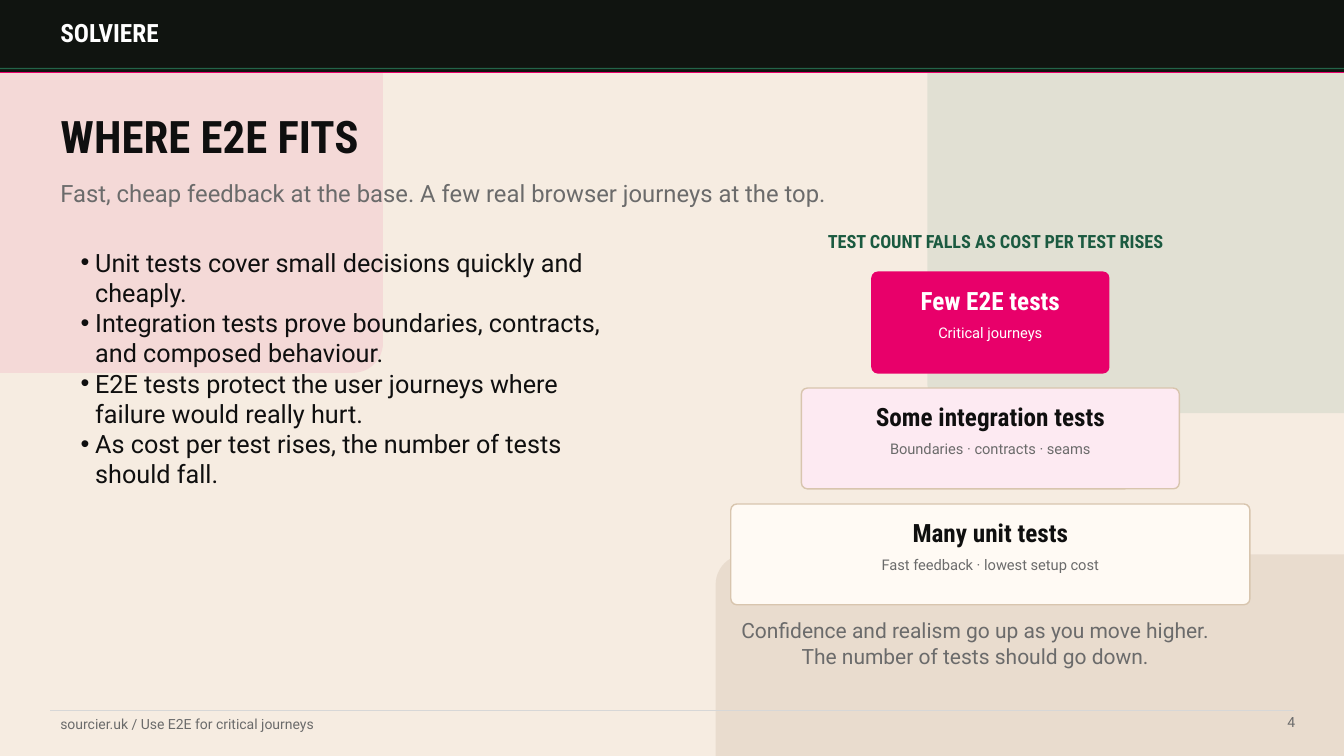
from lxml import etree
from pptx import Presentation
from pptx.dml.color import RGBColor
from pptx.enum.shapes import MSO_CONNECTOR, MSO_SHAPE
from pptx.enum.text import MSO_ANCHOR, MSO_AUTO_SIZE, PP_ALIGN
from pptx.oxml.ns import qn
from pptx.util import Pt

LEFT, CENTER, RIGHT = PP_ALIGN.LEFT, PP_ALIGN.CENTER, PP_ALIGN.RIGHT
TOP, MIDDLE = MSO_ANCHOR.TOP, MSO_ANCHOR.MIDDLE
RECT, ROUNDED = MSO_SHAPE.RECTANGLE, MSO_SHAPE.ROUNDED_RECTANGLE
STRAIGHT = MSO_CONNECTOR.STRAIGHT
NO_AUTOFIT = MSO_AUTO_SIZE.NONE

WIDTH, HEIGHT = 960, 540
SANS, CONDENSED = "Roboto", "Roboto Condensed"
COLORS = {
    "sand": "F6ECE1", "tan": "E5D8C9", "border": "D8C5AE", "cream": "FFFAF4",
    "pink": "E8006A", "blush": "FDEAF2", "green": "2A7D5B", "forest": "1B5A40",
    "night": "101410", "ink": "0F0F0F", "gray": "6B6B6B", "rule": "D7D7D7",
    "white": "FFFFFF",
}
BULLETS = [
    "Unit tests cover small decisions quickly and cheaply.",
    "Integration tests prove boundaries, contracts, and composed behaviour.",
    "E2E tests protect the user journeys where failure would really hurt.",
    "As cost per test rises, the number of tests should fall.",
]
# From the top of the pyramid down: heading, detail, fill, border, heading color, detail color
LEVELS = [
    ("Few E2E tests", "Critical journeys", "pink", "pink", "white", "white"),
    ("Some integration tests", "Boundaries · contracts · seams",
     "blush", "border", "ink", "gray"),
    ("Many unit tests", "Fast feedback · lowest setup cost",
     "cream", "border", "ink", "gray"),
]


def rgb(name):
    return RGBColor.from_string(COLORS[name])


def set_alpha(fill, percent):
    color = fill._xPr.find(qn("a:solidFill"))[0]
    etree.SubElement(color, qn("a:alpha"), val=str(percent * 1000))


def add_panel(page, x, y, w, h, fill, border=None, corner=None, alpha=None):
    kind = RECT if corner is None else ROUNDED
    panel = page.shapes.add_shape(kind, Pt(x), Pt(y), Pt(w), Pt(h))
    panel.shadow.inherit = False
    if corner is not None:
        panel.adjustments[0] = corner
    panel.fill.solid()
    panel.fill.fore_color.rgb = rgb(fill)
    if alpha:
        set_alpha(panel.fill, alpha)
    if border:
        panel.line.color.rgb = rgb(border)
        panel.line.width = Pt(1)
    else:
        panel.line.fill.background()


def add_rule(page, x, y, w, color, alpha=None):
    rule = page.shapes.add_connector(STRAIGHT, Pt(x), Pt(y), Pt(x + w), Pt(y))
    rule.line.color.rgb = rgb(color)
    rule.line.width = Pt(1)
    if alpha:
        set_alpha(rule.line.fill, alpha)
    etree.SubElement(rule.element.spPr, qn("a:effectLst"))


def add_bullet(para, indent):
    props = para._p.get_or_add_pPr()
    props.set("marL", str(Pt(indent)))
    props.set("indent", str(-Pt(indent)))
    etree.SubElement(props, qn("a:buChar"), char="•")


def write(page, text, x, y, w, h, size, color, font=SANS, bold=False,
          align=LEFT, anchor=MIDDLE, inset=True, box=None, bullet_indent=None):
    """Put text, a string or a list of paragraphs, in a new box or a placeholder."""
    if box is None:
        box = page.shapes.add_textbox(Pt(x), Pt(y), Pt(w), Pt(h))
    else:
        box.left, box.top, box.width, box.height = Pt(x), Pt(y), Pt(w), Pt(h)
        box.element.getparent().append(box.element)  # bring to front
    frame = box.text_frame
    frame.word_wrap = True
    frame.auto_size = NO_AUTOFIT
    frame.vertical_anchor = anchor
    if not inset:
        frame.margin_left = frame.margin_right = Pt(0)
        frame.margin_top = frame.margin_bottom = Pt(0)
    lines = [text] if isinstance(text, str) else text
    for index, line in enumerate(lines):
        para = frame.paragraphs[0] if index == 0 else frame.add_paragraph()
        para.alignment = align
        para.space_before = Pt(0)
        if bullet_indent:
            add_bullet(para, bullet_indent)
        span = para.add_run()
        span.text = line
        span.font.name = font
        span.font.size = Pt(size)
        span.font.bold = bold
        span.font.color.rgb = rgb(color)


def add_backdrop(page, w, h):
    page.background.fill.solid()
    page.background.fill.fore_color.rgb = rgb("sand")
    add_panel(page, -151.2, -86.4, 424.8, 352.8, "pink", corner=0.061, alpha=8)
    add_panel(page, w - 297.6, -108, 446.4, 403.2, "green", corner=0.054, alpha=10)
    add_panel(page, w - 448.8, h - 144, 583.2, 244.8, "tan", corner=0.088, alpha=76)


def add_header(page, x, y, w, h):
    add_panel(page, x, y, w, h, "night", border="night")
    add_rule(page, x, y + h, w, "pink")
    add_rule(page, x, y + h - 2.88, w, "green", alpha=76)
    write(page, "SOLVIERE", x + 36, y + 12.24, 201.6, 21.6, 18, "white",
          font=CONDENSED, bold=True)


def add_heading(page, x, y, w):
    write(page, "WHERE E2E FITS", x, y, 640.8, 50.4, 32, "ink", font=CONDENSED,
          bold=True, box=page.shapes.title)
    write(page, "Fast, cheap feedback at the base. A few real browser journeys at the top.",
          x, y + 51.84, w, 27.36, 17, "gray", anchor=TOP)


def add_points(page, x, y, w, h):
    write(page, BULLETS, x, y, w, h, 18, "ink", anchor=TOP, inset=False,
          box=page.placeholders[1], bullet_indent=10.4)


def add_card(page, x, y, w, h, level):
    heading, detail, fill, border, heading_color, detail_color = level
    pad = 8.64
    add_panel(page, x, y, w, h, fill, border=border, corner=0.06)
    write(page, heading, x + pad, y + 12.24, w - 2 * pad, 15.84, 18, heading_color,
          font=CONDENSED, bold=True, align=CENTER)
    write(page, detail, x + pad, y + 37.44, w - 2 * pad, 11.52, 10.5, detail_color,
          align=CENTER)


def add_pyramid(page, x, y, w):
    """Stack the cards so that the lowest fills the width and each above is narrower."""
    card_height, pitch, step = 72, 82.8, 100.8
    write(page, "TEST COUNT FALLS AS COST PER TEST RISES", x - 14.4, y, 406.8, 15.84,
          13, "forest", font=CONDENSED, bold=True, align=CENTER)
    for row, level in enumerate(LEVELS):
        inset = (len(LEVELS) - 1 - row) * step / 2
        add_card(page, x + inset, y + 30.24 + row * pitch, w - 2 * inset,
                 card_height, level)
    write(page, "Confidence and realism go up as you move higher. "
          "The number of tests should go down.",
          x - 10.8, y + 280.8, w, 28.8, 15, "gray", align=CENTER)


def add_footer(page, x, y, w):
    add_rule(page, x, y, w, "rule")
    write(page, "sourcier.uk / Use E2E for critical journeys", x, y + 2.16, 432, 14.4,
          10, "gray")
    write(page, "4", x + w - 78, y + 2.16, 79.2, 14.4, 10, "gray", align=RIGHT,
          anchor=TOP, inset=False)


def main():
    deck = Presentation()
    deck.slide_width, deck.slide_height = Pt(WIDTH), Pt(HEIGHT)
    page = deck.slides.add_slide(deck.slide_layouts[1])
    add_backdrop(page, WIDTH, HEIGHT)
    add_header(page, 0, 0, WIDTH, 51.84)
    add_heading(page, 36, 72, 748.8)
    add_points(page, 57.6, 176.4, 374.4, 244.8)
    add_pyramid(page, 522, 164.16, 370.8)
    add_footer(page, 36, 507.6, 888)
    deck.save("out.pptx")


if __name__ == "__main__":
    main()
